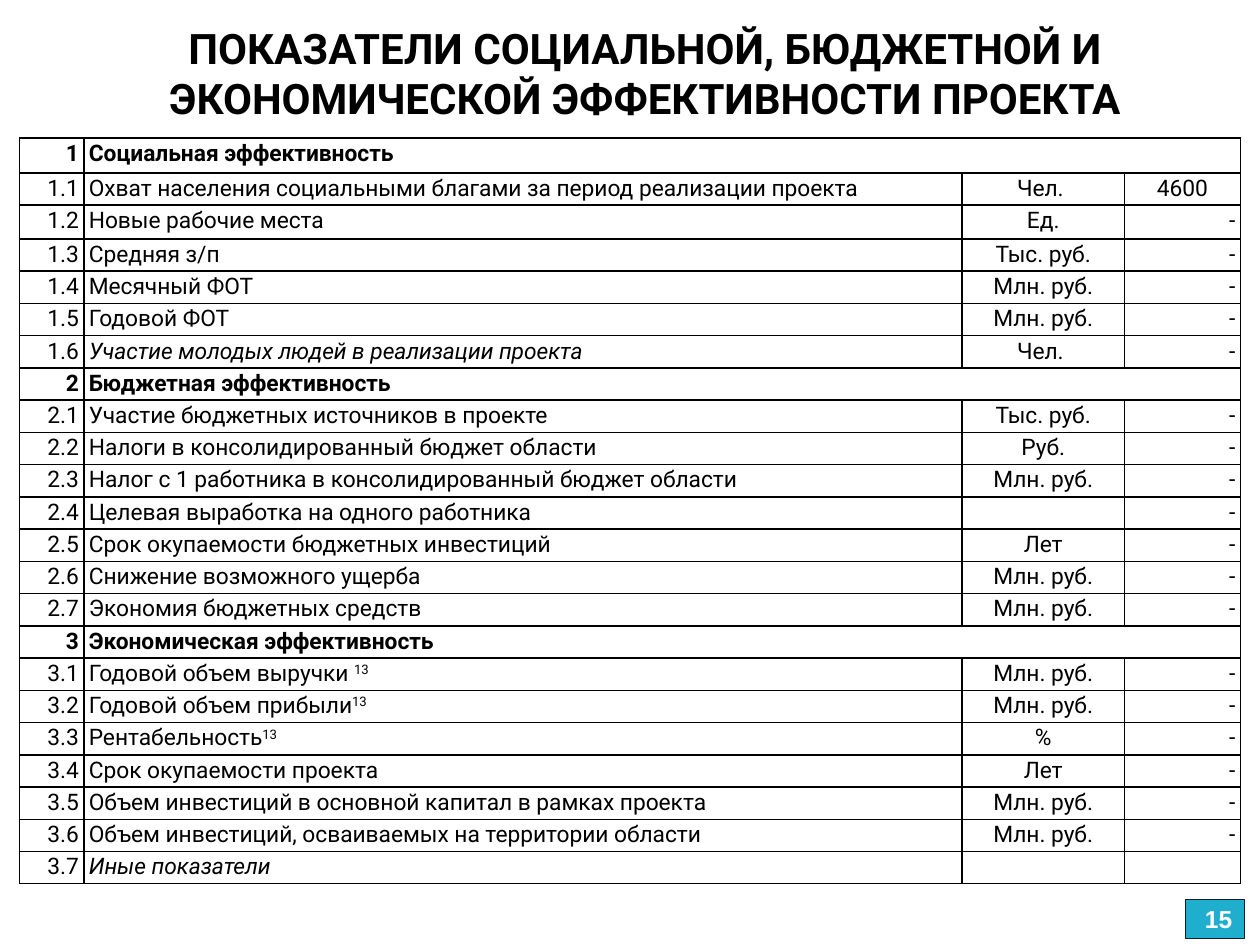
from dataclasses import dataclass
from typing import Any

from lxml.etree import SubElement
from pptx import Presentation
from pptx.dml.color import RGBColor
from pptx.enum.shapes import MSO_SHAPE
from pptx.enum.text import MSO_ANCHOR, PP_ALIGN
from pptx.oxml.ns import qn
from pptx.util import Pt

BLACK = RGBColor(0x00, 0x00, 0x00)
WHITE = RGBColor(0xFF, 0xFF, 0xFF)
TEAL = RGBColor(0x1F, 0xAE, 0xCD)
DARK_TEAL = RGBColor(0x06, 0x23, 0x29)

TITLE_FORMAT = {"name": "Roboto", "size": Pt(24), "bold": True}
CELL_FORMAT = {"name": "Roboto", "size": Pt(13), "bold": False, "italic": False}
NUMBER_FORMAT = {"name": "Arial", "size": Pt(14), "bold": True}
CELL_LAYOUT = {
    "margin_left": Pt(2.9),
    "margin_right": Pt(2.9),
    "margin_top": Pt(1.4),
    "margin_bottom": Pt(1.4),
    "vertical_anchor": MSO_ANCHOR.TOP,
}
COLUMN_WIDTHS = (36.7, 501.8, 92.9, 66.2)
ROW_HEIGHT = 18.45
SPECIAL_HEIGHTS = {0: 20, 2: 19.3}


@dataclass(frozen=True)
class Indicator:
    name: str
    unit: str = ""
    value: str = "-"
    note: str = ""
    italic: bool = False


@dataclass(frozen=True)
class Section:
    name: str
    indicators: tuple[Indicator, ...]


SECTIONS = (
    Section("Социальная эффективность", (
        Indicator("Охват населения социальными благами за период реализации проекта",
                  "Чел. ", "4600"),
        Indicator("Новые рабочие места", "Ед."),
        Indicator("Средняя з/п", "Тыс. руб."),
        Indicator("Месячный ФОТ", "Млн. руб."),
        Indicator("Годовой ФОТ", "Млн. руб."),
        Indicator("Участие молодых людей в реализации проекта", "Чел. ", italic=True),
    )),
    Section("Бюджетная эффективность", (
        Indicator("Участие бюджетных источников в проекте", "Тыс. руб."),
        Indicator("Налоги в консолидированный бюджет области", "Руб."),
        Indicator("Налог с 1 работника в консолидированный бюджет области", "Млн. руб."),
        Indicator("Целевая выработка на одного работника"),
        Indicator("Срок окупаемости бюджетных инвестиций", "Лет"),
        Indicator("Снижение возможного ущерба", "Млн. руб."),
        Indicator("Экономия бюджетных средств", "Млн. руб."),
    )),
    Section("Экономическая эффективность", (
        Indicator("Годовой объем выручки ", "Млн. руб.", note="13"),
        Indicator("Годовой объем прибыли", "Млн. руб.", note="13"),
        Indicator("Рентабельность", "%", note="13"),
        Indicator("Срок окупаемости проекта", "Лет"),
        Indicator("Объем инвестиций в основной капитал в рамках проекта", "Млн. руб."),
        Indicator("Объем инвестиций, осваиваемых на территории области", "Млн. руб."),
        Indicator("Иные показатели", value="", italic=True),
    )),
)


def apply(target: Any, values: dict[str, Any]) -> None:
    for name, value in values.items():
        setattr(target, name, value)


def add_span(para: Any, text: str, values: dict[str, Any], color: RGBColor = BLACK) -> Any:
    span = para.add_run()
    span.text = text
    apply(span.font, values)
    span.font.color.rgb = color
    return span


def add_borders(cell: Any) -> None:
    properties = cell._tc.get_or_add_tcPr()
    for position, side in enumerate(("lnL", "lnR", "lnT", "lnB")):
        line = properties.makeelement(qn(f"a:{side}"), {"w": str(Pt(1))})
        fill = SubElement(line, qn("a:solidFill"))
        SubElement(fill, qn("a:srgbClr"), val=str(BLACK))
        properties.insert(position, line)


def prepare_cell(cell: Any) -> None:
    apply(cell, CELL_LAYOUT)
    cell.fill.solid()
    cell.fill.fore_color.rgb = WHITE
    add_borders(cell)


def write_cell(cell: Any, text: str, alignment: PP_ALIGN, note: str = "",
               **changes: Any) -> None:
    para = cell.text_frame.paragraphs[0]
    para.alignment = alignment
    values = CELL_FORMAT | changes
    if not text:
        SubElement(para._p, qn("a:endParaRPr"), sz="1300")
        return
    add_span(para, text, values)
    if note:
        span = add_span(para, note, values)
        span.font._element.set("baseline", "30000")


def write_section(table: Any, row: int, number: int, section: Section) -> None:
    table.cell(row, 1).merge(table.cell(row, 3))
    write_cell(table.cell(row, 0), str(number), PP_ALIGN.RIGHT, bold=True)
    write_cell(table.cell(row, 1), section.name, PP_ALIGN.LEFT, bold=True)


def write_indicator(table: Any, row: int, number: str, indicator: Indicator) -> None:
    value_alignment = PP_ALIGN.CENTER if indicator.value.isdigit() else PP_ALIGN.RIGHT
    write_cell(table.cell(row, 0), number, PP_ALIGN.RIGHT)
    write_cell(table.cell(row, 1), indicator.name, PP_ALIGN.LEFT, indicator.note,
               italic=indicator.italic)
    write_cell(table.cell(row, 2), indicator.unit, PP_ALIGN.CENTER)
    write_cell(table.cell(row, 3), indicator.value, value_alignment)


def add_title(page: Any) -> None:
    box = page.shapes.add_textbox(Pt(48.2), Pt(8.6), Pt(640.8), Pt(66.2))
    apply(box.text_frame, {"word_wrap": True, "vertical_anchor": MSO_ANCHOR.MIDDLE})
    para = box.text_frame.paragraphs[0]
    para.alignment = PP_ALIGN.CENTER
    add_span(para, "ПОКАЗАТЕЛИ СОЦИАЛЬНОЙ, БЮДЖЕТНОЙ И ЭКОНОМИЧЕСКОЙ ЭФФЕКТИВНОСТИ ПРОЕКТА",
             TITLE_FORMAT)


def add_indicator_table(page: Any) -> None:
    row_count = sum(1 + len(section.indicators) for section in SECTIONS)
    heights = [SPECIAL_HEIGHTS.get(row, ROW_HEIGHT) for row in range(row_count)]
    frame = page.shapes.add_table(row_count, len(COLUMN_WIDTHS), Pt(11.2), Pt(78.8),
                                  Pt(sum(COLUMN_WIDTHS)), Pt(sum(heights)))
    table = frame.table
    apply(table, {"first_row": False, "horz_banding": False})
    for column, width in zip(table.columns, COLUMN_WIDTHS):
        column.width = Pt(width)
    for row, height in zip(table.rows, heights):
        row.height = Pt(height)
    for cell in table.iter_cells():
        prepare_cell(cell)

    row = 0
    for number, section in enumerate(SECTIONS, 1):
        write_section(table, row, number, section)
        for position, indicator in enumerate(section.indicators, 1):
            write_indicator(table, row + position, f"{number}.{position}", indicator)
        row += 1 + len(section.indicators)


def add_page_number(page: Any) -> None:
    box = page.shapes.add_shape(MSO_SHAPE.RECTANGLE, Pt(677.5), Pt(514.1), Pt(33.8), Pt(22.3))
    box.shadow.inherit = False
    box.fill.solid()
    box.fill.fore_color.rgb = TEAL
    box.line.color.rgb = DARK_TEAL
    box.line.width = Pt(0.75)
    box.text_frame.vertical_anchor = MSO_ANCHOR.MIDDLE
    para = box.text_frame.paragraphs[0]
    para.alignment = PP_ALIGN.RIGHT
    add_span(para, "15", NUMBER_FORMAT, WHITE)


def main() -> None:
    deck = Presentation()
    apply(deck, {"slide_width": Pt(720), "slide_height": Pt(540)})
    page = deck.slides.add_slide(deck.slide_layouts[6])
    add_title(page)
    add_indicator_table(page)
    add_page_number(page)
    deck.save("out.pptx")


if __name__ == "__main__":
    main()
